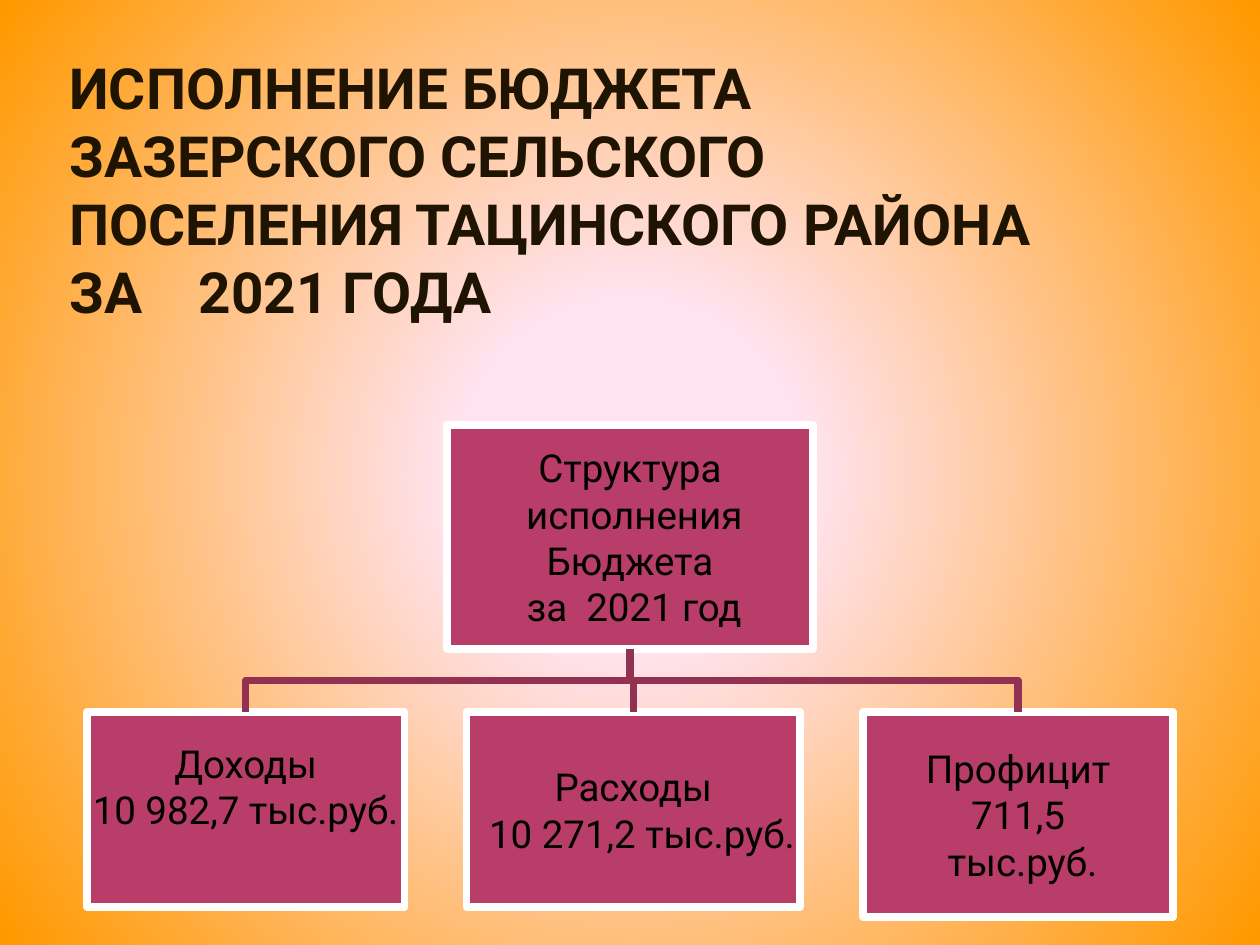
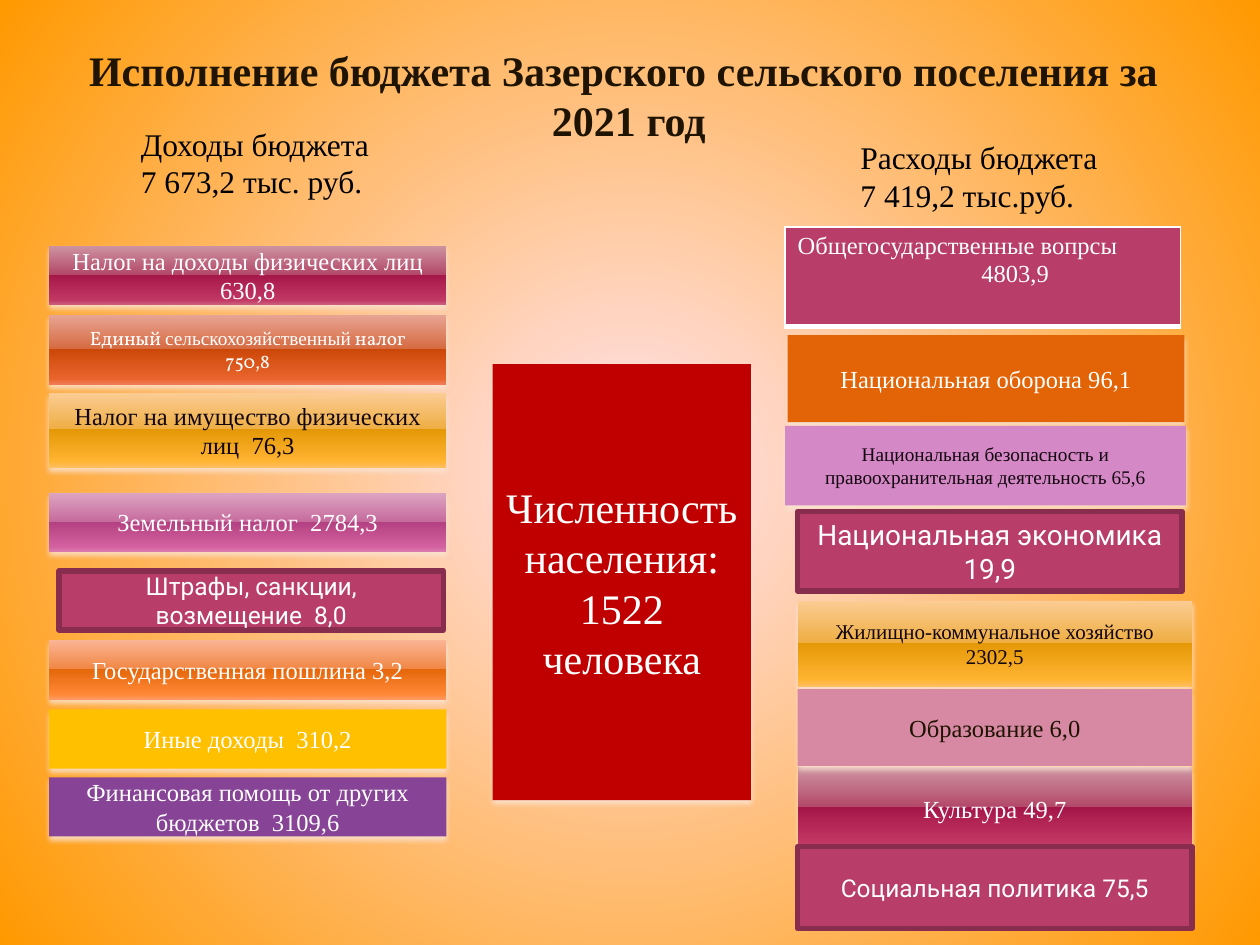
from itertools import cycle

from lxml.etree import fromstring
from pptx import Presentation
from pptx.dml.color import RGBColor
from pptx.enum.shapes import MSO_SHAPE
from pptx.enum.text import MSO_ANCHOR, MSO_AUTO_SIZE, PP_ALIGN
from pptx.oxml.ns import nsdecls, qn
from pptx.util import Pt

COLORS = {
    "center": "FFE3F0", "edge": "FF9900", "title": "1E1401", "black": "000000",
    "white": "FFFFFF", "dark": "12060F", "berry": "B83D68", "frame": "882D4D",
    "branch": "933153", "glow": "FBE6D6", "purple": "874396", "yellow": "FFC000",
    "orange": "E36406", "lilac": "D488C5", "pink": "D788A3", "red": "C00000",
}
GLOSS_POSITIONS = (0, 49, 49, 92, 100)
GLOSS = {
    "gloss berry": ("CE94A2", "B34869", "A61749", "C13764", "CA5D7C"),
    "gloss rust": ("E7A493", "D66B42", "CC4809", "E9642C", "F07B55"),
    "gloss gold": ("FBCC93", "EFAE43", "E59807", "FFB432", "FFBE5F"),
    "gloss orange": ("FBB494", "F08745", "E5670B", "FF8736", "FF9961"),
    "gloss pink": ("DDA4C1", "C66B9D", "B34181", "D361A0", "DC79AE"),
}
SERIF = "Times New Roman"
SANS = "Roboto"
BAR = {"name": SERIF, "size": Pt(14)}
FRAMED = {"name": SANS, "size": Pt(14)}
TREE = {"name": SANS, "size": Pt(22)}
HEADING = {"name": SERIF, "size": Pt(18)}


class Deck:
    """Holds the presentation style and the slide being drawn."""

    def __init__(self):
        self.presentation = Presentation()
        self.presentation.slide_width = Pt(720)
        self.presentation.slide_height = Pt(540)
        self.slide = None

    def color(self, name):
        return RGBColor.from_string(COLORS[name])

    def replace_fill(self, parent, stops, direction):
        stop_xml = "".join(
            f'<a:gs pos="{position * 1000}"><a:srgbClr val="{value}"/></a:gs>'
            for position, value in stops)
        gradient = fromstring(
            f'<a:gradFill {nsdecls("a")} rotWithShape="1">'
            f"<a:gsLst>{stop_xml}</a:gsLst>{direction}</a:gradFill>")
        parent.replace(parent.find(qn("a:solidFill")), gradient)

    def new_slide(self, first, last):
        self.slide = self.presentation.slides.add_slide(
            self.presentation.slide_layouts[5])
        self.slide.background.fill.solid()
        self.replace_fill(
            next(self.slide._element.iter(qn("p:bgPr"))),
            ((first, COLORS["center"]), (last, COLORS["edge"])),
            '<a:path path="circle"><a:fillToRect l="50000" t="50000" '
            'r="50000" b="50000"/></a:path>')

    def add_text(self, frame, text, style, color, align=PP_ALIGN.CENTER,
                 indents=(), fonts=()):
        frame.word_wrap = True
        for index, line in enumerate(text.split("\n")):
            paragraph = frame.paragraphs[0] if index == 0 else frame.add_paragraph()
            paragraph.alignment = align
            if index < len(indents):
                paragraph._p.get_or_add_pPr().set("marL", str(Pt(indents[index])))
            for part, name in zip(line.split("|"), cycle(fonts or (style["name"],))):
                run = paragraph.add_run()
                run.text = part
                for key, value in {**style, "name": name}.items():
                    setattr(run.font, key, value)
                run.font.color.rgb = self.color(color)

    def set_margins(self, frame, left, top, right, bottom):
        margins = {"margin_left": left, "margin_top": top,
                   "margin_right": right, "margin_bottom": bottom}
        for key, value in margins.items():
            setattr(frame, key, Pt(value))

    def title(self, box, text, style, align, anchor, tab=None):
        title = self.slide.shapes.title
        for key, value in zip(("left", "top", "width", "height"), box):
            setattr(title, key, Pt(value))
        frame = title.text_frame
        frame.auto_size = MSO_AUTO_SIZE.NONE
        frame.vertical_anchor = anchor
        if tab:
            self.set_margins(frame, 3.6, 0, 3.6, 0)
            frame.paragraphs[0]._p.get_or_add_pPr().append(fromstring(
                f'<a:tabLst {nsdecls("a")}><a:tab pos="{Pt(tab)}" algn="l"/></a:tabLst>'))
        self.add_text(frame, text, {**style, "bold": True}, "title", align)

    def heading(self, box, text):
        shape = self.slide.shapes.add_textbox(*map(Pt, box))
        self.add_text(shape.text_frame, text, HEADING, "black", PP_ALIGN.LEFT)

    def rectangle(self, box, fill, line=None, line_width=0):
        shape = self.slide.shapes.add_shape(MSO_SHAPE.RECTANGLE, *map(Pt, box))
        shape.fill.solid()
        if fill in GLOSS:
            self.replace_fill(shape._element.spPr, zip(GLOSS_POSITIONS, GLOSS[fill]),
                              '<a:lin ang="5400000" scaled="0"/>')
        else:
            shape.fill.fore_color.rgb = self.color(fill)
        if line:
            shape.line.color.rgb = self.color(line)
            shape.line.width = Pt(line_width)
        else:
            shape.line.fill.background()
        shape.shadow.inherit = False
        shape.text_frame.vertical_anchor = MSO_ANCHOR.MIDDLE
        return shape

    def bar(self, box, fill, text, style=BAR, color="white", fonts=()):
        shape = self.rectangle(box, fill)
        shape._element.spPr.find(qn("a:effectLst")).append(fromstring(
            f'<a:outerShdw {nsdecls("a")} blurRad="{Pt(3.1)}" dist="{Pt(2)}" '
            f'dir="5400000" rotWithShape="0"><a:srgbClr val="{COLORS["glow"]}">'
            '<a:alpha val="83000"/></a:srgbClr></a:outerShdw>'))
        self.add_text(shape.text_frame, text, style, color, fonts=fonts)

    def framed_bar(self, box, text, style=FRAMED):
        shape = self.rectangle(box, "berry", "frame", 3.15)
        self.add_text(shape.text_frame, text, style, "white")

    def tree_box(self, box, text, indents=(), bottom=1.5):
        shape = self.rectangle(box, "berry", "white", 4.33)
        self.set_margins(shape.text_frame, 1.5, 1.5, 1.5, bottom)
        self.add_text(shape.text_frame, text, TREE, "black", indents=indents)
        return shape

    def branch(self, parent, child):
        start_x = parent.left + parent.width // 2
        start_y = parent.top + parent.height
        end_x = child.left + child.width // 2
        middle_y = (start_y + child.top) // 2
        builder = self.slide.shapes.build_freeform(start_x, start_y)
        builder.add_line_segments(
            ((start_x, middle_y), (end_x, middle_y), (end_x, child.top)), close=False)
        shape = builder.convert_to_shape()
        shape.fill.background()
        shape.line.color.rgb = self.color("branch")
        shape.line.width = Pt(4.33)
        shape.shadow.inherit = False

    def table_cell(self, box, text, indents):
        table = self.slide.shapes.add_table(1, 1, *map(Pt, box)).table
        table.first_row = table.horz_banding = False
        cell = table.cell(0, 0)
        cell.fill.solid()
        cell.fill.fore_color.rgb = self.color("berry")
        self.add_text(cell.text_frame, text, BAR, "white", PP_ALIGN.LEFT, indents)
        properties = cell._tc.get_or_add_tcPr()
        for index, (side, width) in enumerate(zip("LRTB", (1, 1, 1, 3))):
            properties.insert(index, fromstring(
                f'<a:ln{side} {nsdecls("a")} w="{Pt(width)}"><a:solidFill>'
                f'<a:srgbClr val="{COLORS["white"]}"/></a:solidFill></a:ln{side}>'))


def build_structure(deck):
    deck.new_slide(22, 99)
    deck.title((36, 25.2, 570.2, 160.6),
               "ИСПОЛНЕНИЕ БЮДЖЕТА ЗАЗЕРСКОГО СЕЛЬСКОГО ПОСЕЛЕНИЯ "
               "ТАЦИНСКОГО РАЙОНА ЗА\t2021 ГОДА",
               {"name": SANS, "size": Pt(32.4)}, PP_ALIGN.LEFT, MSO_ANCHOR.BOTTOM, 74)
    root = deck.tree_box((255.4, 242.8, 209.2, 128),
                         "Структура\nисполнения\nБюджета\nза  2021 год", (0, 5, 0, 5))
    children = (
        deck.tree_box((49.7, 406.8, 181.4, 111.6), "Доходы\n10 982,7 тыс.руб.", bottom=28),
        deck.tree_box((266.6, 406.8, 190.6, 111.6), "Расходы\n10 271,2 тыс.руб.", (0, 10)),
        deck.tree_box((493.3, 406.8, 177, 117.2), "Профицит\n711,5\nтыс.руб.", (0, 0, 5)),
    )
    for child in children:
        deck.branch(root, child)


def build_budget(deck):
    deck.new_slide(0, 100)
    deck.title((38.9, 21.6, 640.8, 65.5),
               "Исполнение бюджета Зазерского сельского поселения за  2021 год",
               {"name": SERIF, "size": Pt(24)}, PP_ALIGN.CENTER, MSO_ANCHOR.TOP)
    deck.heading((73.4, 67.7, 156.2, 51.1), "Доходы бюджета\n7 673,2 тыс. руб.")
    deck.heading((484.6, 75.6, 221.8, 67.7), "Расходы бюджета\n7 419,2 тыс.руб.")

    incomes = (
        (140.4, 33.8, "gloss berry", "Налог на доходы физических лиц 630,8", "white"),
        (224.6, 42.5, "gloss gold", "Налог на имущество физических лиц  76,3", "dark"),
        (281.5, 33.8, "gloss pink", "Земельный налог  2784,3", "white"),
        (365.8, 33.8, "gloss orange", "Государственная пошлина 3,2", "white"),
        (405.4, 33.8, "yellow", "Иные доходы  310,2", "white"),
        (444.2, 33.8, "purple", "Финансовая помощь от других бюджетов  3109,6", "white"),
    )
    for top, height, fill, text, color in incomes:
        deck.bar((28.1, top, 227, height), fill, text, color=color)
    deck.bar((28.1, 180, 227, 39.6), "gloss rust",
             "Единый |сельскохозяйственный| налог\n750,8",
             {"name": "Vollkorn", "size": Pt(11)}, fonts=("Vollkorn", SERIF))
    deck.framed_bar((33.8, 326.2, 219.6, 33.8), "Штрафы, санкции, возмещение  8,0")

    deck.bar((281.5, 208.1, 147.6, 249.1), "red",
             "Численность населения:\n1522\nчеловека", {"name": SERIF, "size": Pt(24)})

    deck.table_cell((448.6, 129.6, 226, 57), "Общегосударственные вопрсы\n4803,9", (0, 105))
    expenses = (
        (450, 191.5, 226.8, 49.7, "orange", "Национальная оборона 96,1", 14, "white"),
        (448.6, 243.4, 229, 45.4, "lilac",
         "Национальная безопасность и правоохранительная деятельность 65,6", 11, "dark"),
        (455.8, 343.4, 225.4, 49, "gloss gold",
         "Жилищно-коммунальное хозяйство\n2302,5", 12, "dark"),
        (455.8, 438.5, 225.4, 46.8, "gloss berry", "Культура 49,7", 14, "white"),
        (455.8, 393.8, 225.4, 43.9, "pink", "Образование 6,0", 14, "title"),
    )
    for left, top, width, height, fill, text, size, color in expenses:
        deck.bar((left, top, width, height), fill, text,
                 {"name": SERIF, "size": Pt(size)}, color)
    deck.framed_bar((455.8, 292.3, 219.6, 45.4), "Национальная экономика 19,9",
                    {"name": SANS, "size": Pt(16)})
    deck.framed_bar((455.8, 483.8, 225.4, 46.8), "Социальная политика 75,5")


def main():
    deck = Deck()
    build_structure(deck)
    build_budget(deck)
    deck.presentation.save("out.pptx")


if __name__ == "__main__":
    main()
